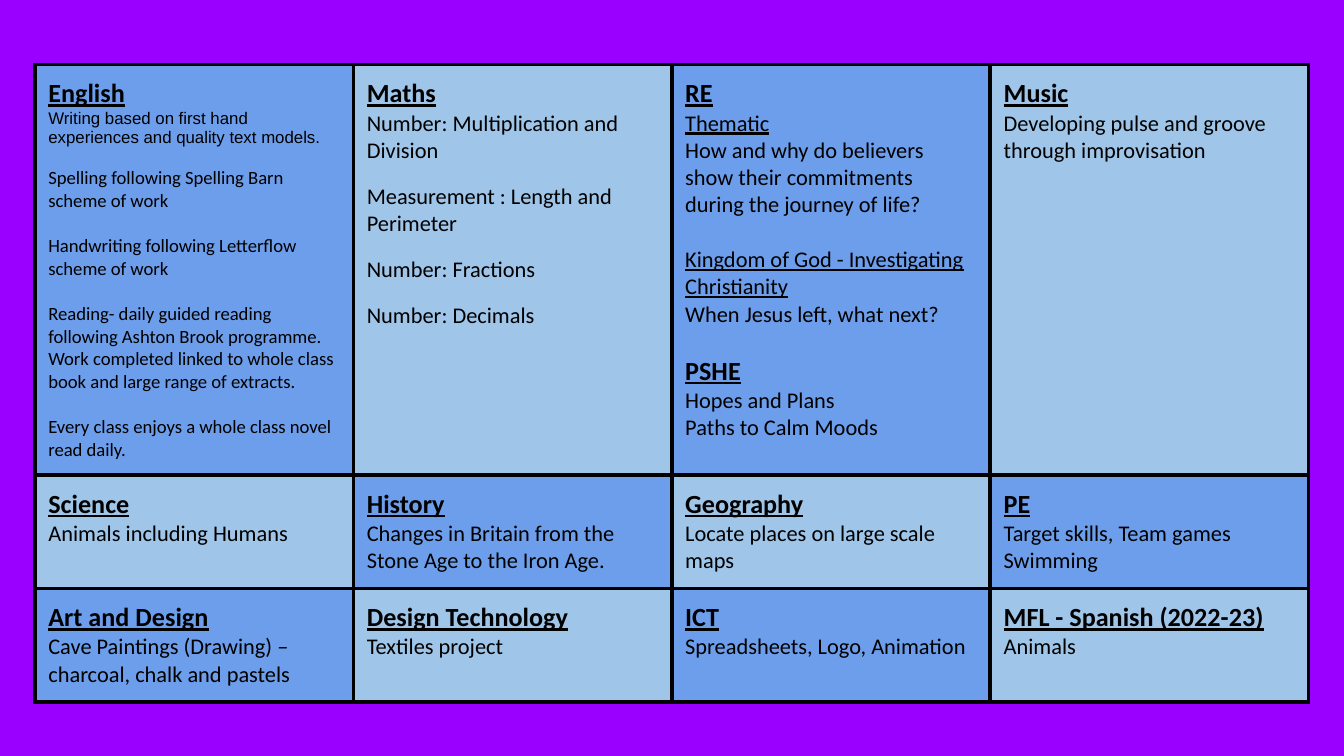
from dataclasses import dataclass

from lxml.etree import SubElement
from pptx import Presentation
from pptx.dml.color import RGBColor
from pptx.oxml.ns import qn
from pptx.util import Pt

PURPLE = RGBColor(0x99, 0x00, 0xFF)
BLUE = RGBColor(0x6D, 0x9E, 0xEB)
PALE_BLUE = RGBColor(0x9F, 0xC5, 0xE8)
BLACK = RGBColor(0x00, 0x00, 0x00)

LEFT, TOP = 18.72, 34.56
COL_WIDTH = 170.6
ROW_HEIGHTS = (209, 60, 60)
MARGIN = 7.2
BORDER = 2.25


@dataclass(frozen=True)
class Line:
    text: str
    size: float = 12
    before: float = 0
    font: str = "Calibri"
    bold: bool = False
    underline: bool = False


def heading(text: str, before: float = 0) -> Line:
    return Line(text, size=14, before=before, bold=True, underline=True)


def small(text: str, before: float = 12.2) -> Line:
    return Line(text, size=10, before=before)


SUBJECTS = (
    (
        (
            heading("English"),
            Line("Writing based on first hand experiences and quality text models.",
                 size=9, font="Arial"),
            small("Spelling following Spelling Barn scheme of work", before=10.4),
            small("Handwriting following Letterflow scheme of work"),
            small("Reading- daily guided reading following Ashton Brook programme. "
                  "Work completed linked to whole class book and large range of extracts."),
            small("Every class enjoys a whole class novel read daily."),
        ),
        (
            heading("Maths"),
            Line("Number: Multiplication and Division"),
            Line("Measurement : Length and Perimeter", before=10),
            Line("Number: Fractions", before=10),
            Line("Number: Decimals", before=10),
        ),
        (
            heading("RE"),
            Line("Thematic", underline=True),
            Line("How and why do believers show their commitments "
                 "during the journey of life?"),
            Line("Kingdom of God - Investigating Christianity",
                 before=14.6, underline=True),
            Line("When Jesus left, what next?"),
            heading("PSHE", before=14.6),
            Line("Hopes and Plans"),
            Line("Paths to Calm Moods"),
        ),
        (heading("Music"), Line("Developing pulse and groove through improvisation")),
    ),
    (
        (heading("Science"), Line("Animals including Humans")),
        (heading("History"), Line("Changes in Britain from the Stone Age to the Iron Age.")),
        (heading("Geography"), Line("Locate places on large scale maps")),
        (heading("PE"), Line("Target skills, Team games"), Line("Swimming")),
    ),
    (
        (heading("Art and Design"),
         Line("Cave Paintings (Drawing) – charcoal, chalk and pastels")),
        (heading("Design Technology"), Line("Textiles project")),
        (heading("ICT"), Line("Spreadsheets, Logo, Animation")),
        (heading("MFL - Spanish (2022-23)"), Line("Animals")),
    ),
)


def add_borders(cell) -> None:
    """Outline all four sides; call before filling, as the schema puts lines first."""
    tc_pr = cell._tc.get_or_add_tcPr()
    for side in ("lnL", "lnR", "lnT", "lnB"):
        ln = SubElement(tc_pr, qn(f"a:{side}"), w=str(Pt(BORDER)))
        fill = SubElement(ln, qn("a:solidFill"))
        SubElement(fill, qn("a:srgbClr"), val=str(BLACK))


def write_line(p, line: Line) -> None:
    p.text = line.text
    p.space_before = Pt(line.before)
    font = p.runs[0].font
    font.name = line.font
    font.size = Pt(line.size)
    font.bold = line.bold
    font.underline = line.underline
    font.color.rgb = BLACK


def fill_cell(cell, lines: tuple[Line, ...], color: RGBColor) -> None:
    add_borders(cell)
    cell.fill.solid()
    cell.fill.fore_color.rgb = color
    cell.margin_left = cell.margin_right = Pt(MARGIN)
    cell.margin_top = cell.margin_bottom = Pt(MARGIN)
    tf = cell.text_frame
    for i, line in enumerate(lines):
        write_line(tf.add_paragraph() if i else tf.paragraphs[0], line)


def add_subject_table(s) -> None:
    n_rows, n_cols = len(SUBJECTS), len(SUBJECTS[0])
    table = s.shapes.add_table(
        n_rows, n_cols, Pt(LEFT), Pt(TOP),
        Pt(COL_WIDTH * n_cols), Pt(sum(ROW_HEIGHTS)),
    ).table
    for col in table.columns:
        col.width = Pt(COL_WIDTH)
    for r, (height, subjects) in enumerate(zip(ROW_HEIGHTS, SUBJECTS)):
        table.rows[r].height = Pt(height)
        for c, lines in enumerate(subjects):
            fill_cell(table.cell(r, c), lines, PALE_BLUE if (r + c) % 2 else BLUE)


def main() -> None:
    prs = Presentation()
    prs.slide_width, prs.slide_height = Pt(720), Pt(405)
    s = prs.slides.add_slide(prs.slide_layouts[6])
    s.background.fill.solid()
    s.background.fill.fore_color.rgb = PURPLE
    add_subject_table(s)
    prs.save("out.pptx")


if __name__ == "__main__":
    main()
